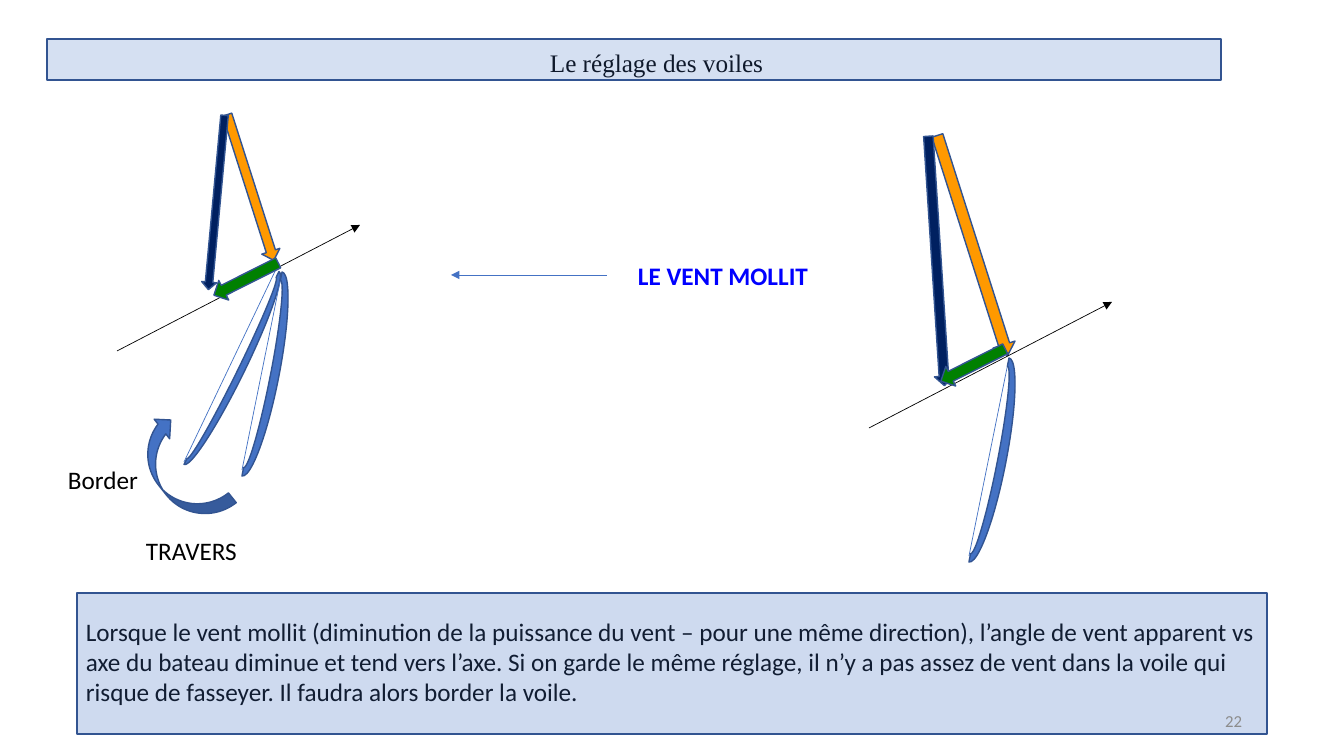
from lxml import etree
from pptx import Presentation
from pptx.dml.color import RGBColor
from pptx.enum.shapes import MSO_CONNECTOR, MSO_SHAPE
from pptx.enum.text import MSO_ANCHOR, PP_ALIGN
from pptx.oxml.ns import qn
from pptx.util import Pt

PX = 914400 / 100.8
RECTANGLE = MSO_SHAPE.RECTANGLE
RIGHT_ARROW = MSO_SHAPE.RIGHT_ARROW
DOWN_ARROW = MSO_SHAPE.DOWN_ARROW
BLOCK_ARC = MSO_SHAPE.BLOCK_ARC
CURVED_ARROW = MSO_SHAPE.CURVED_LEFT_ARROW
STRAIGHT = MSO_CONNECTOR.STRAIGHT
LEFT, RIGHT = PP_ALIGN.LEFT, PP_ALIGN.RIGHT
TOP, MIDDLE = MSO_ANCHOR.TOP, MSO_ANCHOR.MIDDLE

BLUE, OUTLINE, BLACK = "4472C4", "325491", "000000"
ORANGE, NAVY, GREEN = "FF9900", "002060", "008000"

EXPLANATION = (
    "Lorsque le vent mollit (diminution de la puissance du vent – pour une même direction), "
    "l’angle de vent apparent vs",
    "axe du bateau diminue et tend vers l’axe. Si on garde le même réglage, "
    "il n’y a pas assez de vent dans la voile qui",
    "risque de fasseyer. Il faudra alors border la voile.",
)


def px(*lengths):
    return [round(length * PX) for length in lengths]


def color(hex_string):
    return RGBColor.from_string(hex_string)


def add_text(slide, box, *lines, size=18, font="Calibri", fill=BLACK, bold=False,
             align=LEFT, anchor=TOP, wrap=False):
    frame = slide.shapes.add_textbox(*px(*box)).text_frame
    frame.word_wrap = wrap
    frame.vertical_anchor = anchor
    for number, line in enumerate(lines):
        paragraph = frame.add_paragraph() if number else frame.paragraphs[0]
        paragraph.alignment = align
        run = paragraph.add_run()
        run.text = line
        run.font.name = font
        run.font.size = Pt(size)
        run.font.bold = bold
        run.font.color.rgb = color(fill)


def add_figure(slide, kind, box, fill=BLUE, rotation=0, opacity=100):
    shape = slide.shapes.add_shape(kind, *px(*box))
    shape.shadow.inherit = False
    shape.rotation = rotation
    shape.fill.solid()
    shape.fill.fore_color.rgb = color(fill)
    shape.line.color.rgb = color(OUTLINE)
    shape.line.width = Pt(1)
    if opacity < 100:
        solid_color = shape.fill._xPr.find(qn("a:solidFill"))[0]
        etree.SubElement(solid_color, qn("a:alpha"), val=str(opacity * 1000))


def add_line(slide, start, end, fill=BLUE, arrow=False):
    connector = slide.shapes.add_connector(STRAIGHT, *px(*start, *end))
    connector.line.color.rgb = color(fill)
    connector.line.width = Pt(0.5)
    if arrow:
        etree.SubElement(connector.line._get_or_add_ln(), qn("a:tailEnd"), type="triangle")
    etree.SubElement(connector._element.spPr, qn("a:effectLst"))


def add_title(slide, left, top):
    add_text(slide, (left + 493, top + 3, 236, 40), "Le réglage des voiles",
             font="Times New Roman")
    add_figure(slide, RECTANGLE, (left, top, 1174, 41), opacity=22)


def add_wind_diagram(slide, left, top, apparent_wind, true_wind, course):
    """Place the wind triangle, course and sail around the green arrow's corner."""
    def at(x, y, *extent):
        return (left + x, top + y, *extent)

    add_figure(slide, RIGHT_ARROW, at(*apparent_wind), ORANGE, rotation=72.3)
    true_box, true_angle = true_wind
    add_figure(slide, DOWN_ARROW, at(*true_box), NAVY, rotation=true_angle)
    add_line(slide, at(71, 9), at(32, 202))
    course_x, course_y = course
    add_line(slide, at(course_x, course_y), at(course_x + 243, course_y - 126), BLACK, arrow=True)
    add_figure(slide, BLOCK_ARC, at(-52, 89, 208, 34), rotation=101.1)
    add_figure(slide, RIGHT_ARROW, at(0, 0, 72, 22), GREEN, rotation=153.3)


def add_trimmed_sail(slide, left, top):
    add_line(slide, (left + 155, top - 92), (left + 60, top + 107))
    add_figure(slide, BLOCK_ARC, (left, top, 215, 26), rotation=116.2)


def add_trim_instruction(slide, left, top):
    add_text(slide, (left, top, 91, 40), "Border")
    add_figure(slide, CURVED_ARROW, (left + 97, top - 46, 50, 118), rotation=141.6)
    add_text(slide, (left + 78, top + 71, 264, 40), "TRAVERS", wrap=True)


def add_wind_change(slide, left, top):
    add_line(slide, (left + 156, top + 20), (left, top + 20), arrow=True)
    add_text(slide, (left + 177, top, 193, 40), "LE VENT MOLLIT", fill="0000FF", bold=True)


def add_explanation(slide, left, top):
    add_text(slide, (left - 1, top + 18, 1205, 102), *EXPLANATION)
    add_figure(slide, RECTANGLE, (left, top, 1190, 141), opacity=26)
    add_text(slide, (left + 873, top + 108, 302, 40), "22", size=12, fill="8C8C8C",
             align=RIGHT, anchor=MIDDLE, wrap=True)


def main():
    presentation = Presentation()
    presentation.slide_width, presentation.slide_height = px(1344, 756)
    slide = presentation.slides.add_slide(presentation.slide_layouts[6])
    add_title(slide, 47, 39)
    add_trimmed_sail(slide, 124, 355)
    add_wind_diagram(slide, 210, 268, apparent_wind=(-36, -90, 153, 19),
                     true_wind=((-1, -153, 15, 175), 5.3), course=(-93, 83))
    add_wind_diagram(slide, 937, 354, apparent_wind=(-80, -120, 231, 23),
                     true_wind=((-10, -218, 19, 250), 356.3), course=(-68, 74))
    add_trim_instruction(slide, 58, 459)
    add_wind_change(slide, 451, 255)
    add_explanation(slide, 77, 593)
    presentation.save("out.pptx")


if __name__ == "__main__":
    main()
